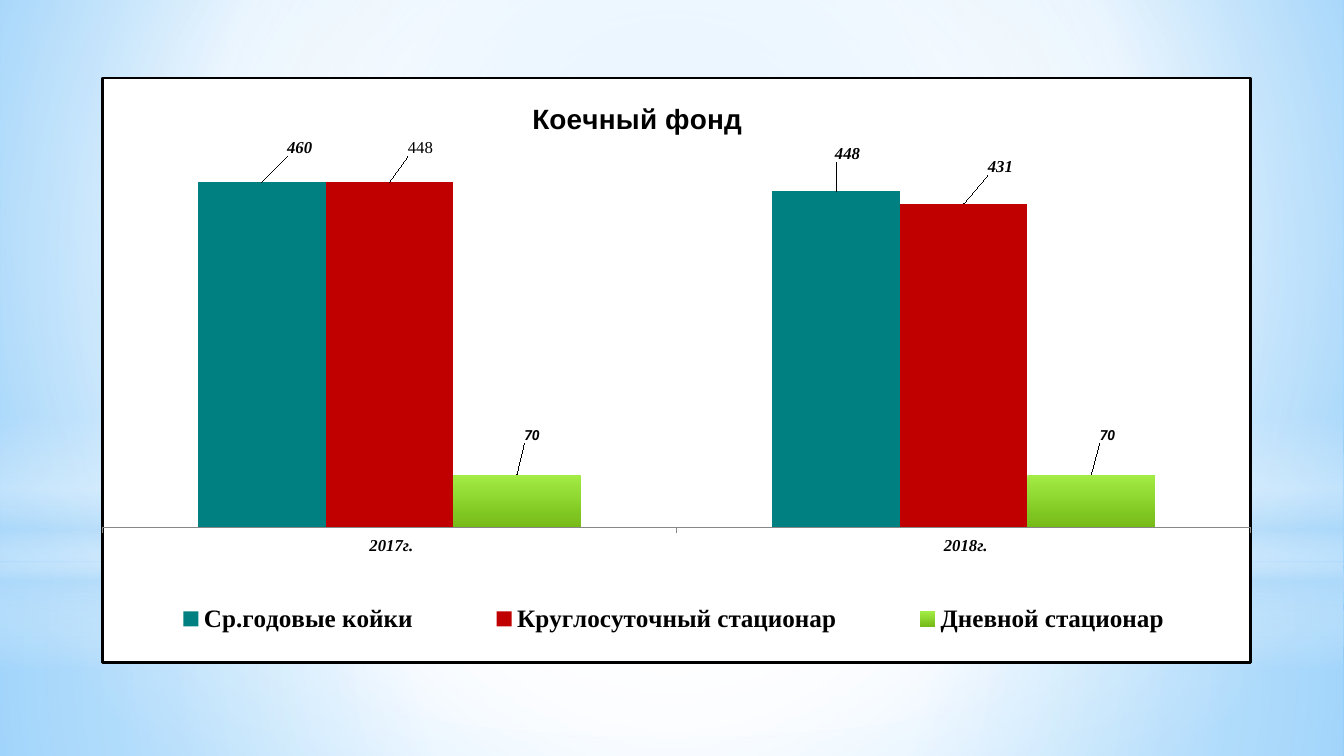
import pptx
import pptx.chart.data
import pptx.dml.color
import pptx.enum.chart
import pptx.enum.shapes
import pptx.oxml
import pptx.oxml.ns
import pptx.util
from dataclasses import dataclass

WIDTH, HEIGHT = 13.33, 7.5
TITLE = "Коечный фонд"
YEARS = [" 2017г.", " 2018г."]
# name, values, colour, serif labels, label shifts (shares of the chart)
SERIES = [
    ("Ср.годовые койки", (460, 448), "008080", True, [(0.033, -0.037), (0.01, -0.042)]),
    ("Круглосуточный стационар", (460, 431), "C00000", True, [(0.027, -0.037), (0.032, -0.042)]),
    ("Дневной стационар", (70, 70), "A7EA52", False, [(0.013, -0.046), (0.014, -0.047)]),
]
CUSTOM_LABELS = {("Круглосуточный стационар", 0): "448"}


@dataclass(frozen=True)
class Theme:
    serif: str = "Times New Roman"
    sans: str = "Arial"
    body: str = "Roboto"
    title_size: int = 20
    legend_size: int = 18
    label_size: int = 12
    small_size: int = 10
    ink: str = "000000"
    paper: str = "FFFFFF"
    axis: str = "878787"
    green_stops: tuple = ((0, "A3EC45"), (100, "76BB17"))


THEME = Theme()
# gradient stops: position, colour, opacity in percent
BACKDROP = [(0, "9ED5FF"), (60, "FFFFFF"), (100, "5BB9FF")]
CENTER = (50, 50, 50, 50)
# shape, top, height, stops, focus of a circular gradient (None = vertical)
GLOWS = [
    ("RECTANGLE", 5.58, 1.92, [(0, "FFFFFF", 91), (37, "FFFFFF", 76), (100, "B4DCFA", 79)], CENTER),
    ("RECTANGLE", 0, 5.58, [(0, "FFFFFF", 89), (48, "FFFFFF", 62), (100, "B4DCFA", 79)], CENTER),
    ("RECTANGLE", 4.12, 2.5, [(0, "FFFFFF", 0), (29, "FFFFFF", 30), (45, "B4DCFA", 40),
                              (55, "FFFFFF", 26), (65, "B4DCFA", 60), (100, "FFFFFF", 0)], None),
    ("OVAL", 1.75, 5.58, [(0, "FFFFFF", 100), (56, "FFFFFF", 0)], CENTER),
]


def rgb(color):
    return pptx.dml.color.RGBColor.from_string(color)


def set_gradient(fill, element, stops, focus=None):
    """Give the fill, the first one inside element, a circular or vertical gradient."""
    fill.solid()
    fill.fore_color.rgb = rgb(THEME.paper)
    solid = element.find(".//" + pptx.oxml.ns.qn("a:solidFill"))
    marks = ""
    for position, color, *opacity in stops:
        alpha = f'<a:alpha val="{opacity[0] * 1000}"/>' if opacity else ""
        marks += f'<a:gs pos="{position * 1000}"><a:srgbClr val="{color}">{alpha}</a:srgbClr></a:gs>'
    if focus:
        sides = " ".join(f'{side}="{share * 1000}"' for side, share in zip("ltrb", focus))
        direction = f'<a:path path="circle"><a:fillToRect {sides}/></a:path>'
    else:
        direction = '<a:lin ang="5400000" scaled="0"/>'
    gradient = pptx.oxml.parse_xml(
        f'<a:gradFill {pptx.oxml.ns.nsdecls("a")} rotWithShape="1">'
        f"<a:gsLst>{marks}</a:gsLst>{direction}</a:gradFill>")
    solid.getparent().replace(solid, gradient)


def set_font(font, name, size, bold=False, italic=False):
    font.name, font.size = name, pptx.util.Pt(size)
    font.bold, font.italic = bold, italic
    font.color.rgb = rgb(THEME.ink)


def set_text(frame, text, **font_format):
    frame.text = text
    set_font(frame.paragraphs[0].runs[0].font, **font_format)


def make_layout(**shares):
    """Manual chart layout; keys are the names of its XML parts."""
    parts = "".join(f'<c:{key} val="{value}"/>' for key, value in shares.items())
    return pptx.oxml.parse_xml(
        f'<c:layout {pptx.oxml.ns.nsdecls("c")}><c:manualLayout>{parts}</c:manualLayout></c:layout>')


def place(parent, index, **shares):
    for old in parent.findall(pptx.oxml.ns.qn("c:layout")):
        parent.remove(old)
    parent.insert(index, make_layout(**shares))


def add_background(slide):
    set_gradient(slide.background.fill, slide.element, BACKDROP, (20, 10, 20, 60))
    for kind, top, height, stops, focus in GLOWS:
        shape = slide.shapes.add_shape(
            getattr(pptx.enum.shapes.MSO_SHAPE, kind), 0, pptx.util.Inches(top),
            pptx.util.Inches(WIDTH), pptx.util.Inches(height))
        shape.shadow.inherit = False
        set_gradient(shape.fill, shape.element, stops, focus)
        shape.line.fill.background()


def format_series(series, name, color, serif, shifts):
    if name == SERIES[-1][0]:
        set_gradient(series.format.fill, series._element, THEME.green_stops)
    else:
        series.format.fill.solid()
        series.format.fill.fore_color.rgb = rgb(color)
    series.invert_if_negative = False
    family, size = (THEME.serif, THEME.label_size) if serif else (THEME.body, THEME.small_size)
    for index in range(len(shifts)):
        label = series.points[index].data_label
        custom = CUSTOM_LABELS.get((name, index))
        if custom:
            set_text(label.text_frame, custom, name=family, size=size)
        else:
            set_font(label.font, family, size, bold=True, italic=True)
        label.position = pptx.enum.chart.XL_LABEL_POSITION.OUTSIDE_END
    for label, (x, y) in zip(series._element.iter(pptx.oxml.ns.qn("c:dLbl")), shifts):
        place(label, 1, x=x, y=y)


def add_bed_chart(slide):
    data = pptx.chart.data.CategoryChartData()
    data.categories = YEARS
    for name, values, *_ in SERIES:
        data.add_series(name, values)
    chart = slide.shapes.add_chart(
        pptx.enum.chart.XL_CHART_TYPE.COLUMN_CLUSTERED,
        *map(pptx.util.Inches, (1, 0.76, 11.42, 5.83)), data).chart
    set_font(chart.font, THEME.body, THEME.small_size)

    set_text(chart.chart_title.text_frame, TITLE, name=THEME.sans, size=THEME.title_size, bold=True)
    place(chart.chart_title._element, 1, xMode="edge", yMode="edge", x=0.37, y=0.03)

    plot = chart.plots[0]
    plot.gap_width, plot.overlap, plot.vary_by_categories = 150, 0, False
    for series, (name, _, color, serif, shifts) in zip(plot.series, SERIES):
        format_series(series, name, color, serif, shifts)
    plot_area = chart.element.find(".//" + pptx.oxml.ns.qn("c:plotArea"))
    place(plot_area, 0, layoutTarget="inner", xMode="edge", yMode="edge", x=0, y=0.127, w=1, h=0.641)

    years = chart.category_axis
    set_font(years.tick_labels.font, THEME.serif, THEME.label_size, bold=True, italic=True)
    years.major_tick_mark = pptx.enum.chart.XL_TICK_MARK.OUTSIDE
    years.format.line.color.rgb = rgb(THEME.axis)
    beds = chart.value_axis
    beds.minimum_scale, beds.maximum_scale = 0, 500
    beds.has_major_gridlines = False
    beds.visible = False

    chart.has_legend = True
    legend = chart.legend
    legend.position = pptx.enum.chart.XL_LEGEND_POSITION.BOTTOM
    legend.include_in_layout = False
    set_font(legend.font, THEME.serif, THEME.legend_size, bold=True)
    place(legend._element, 1, xMode="edge", yMode="edge", x=0.005, y=0.88, w=0.985, h=0.09)

    frame = pptx.oxml.parse_xml(
        f'<c:spPr {pptx.oxml.ns.nsdecls("c", "a")}>'
        f'<a:solidFill><a:srgbClr val="{THEME.paper}"/></a:solidFill>'
        f'<a:ln w="{pptx.util.Pt(2)}"><a:solidFill><a:srgbClr val="{THEME.ink}"/></a:solidFill></a:ln>'
        "</c:spPr>")
    chart.element.find(pptx.oxml.ns.qn("c:txPr")).addprevious(frame)


def main():
    presentation = pptx.Presentation()
    presentation.slide_width = pptx.util.Inches(WIDTH)
    presentation.slide_height = pptx.util.Inches(HEIGHT)
    slide = presentation.slides.add_slide(presentation.slide_layouts[6])
    add_background(slide)
    add_bed_chart(slide)
    presentation.save("out.pptx")


if __name__ == "__main__":
    main()
